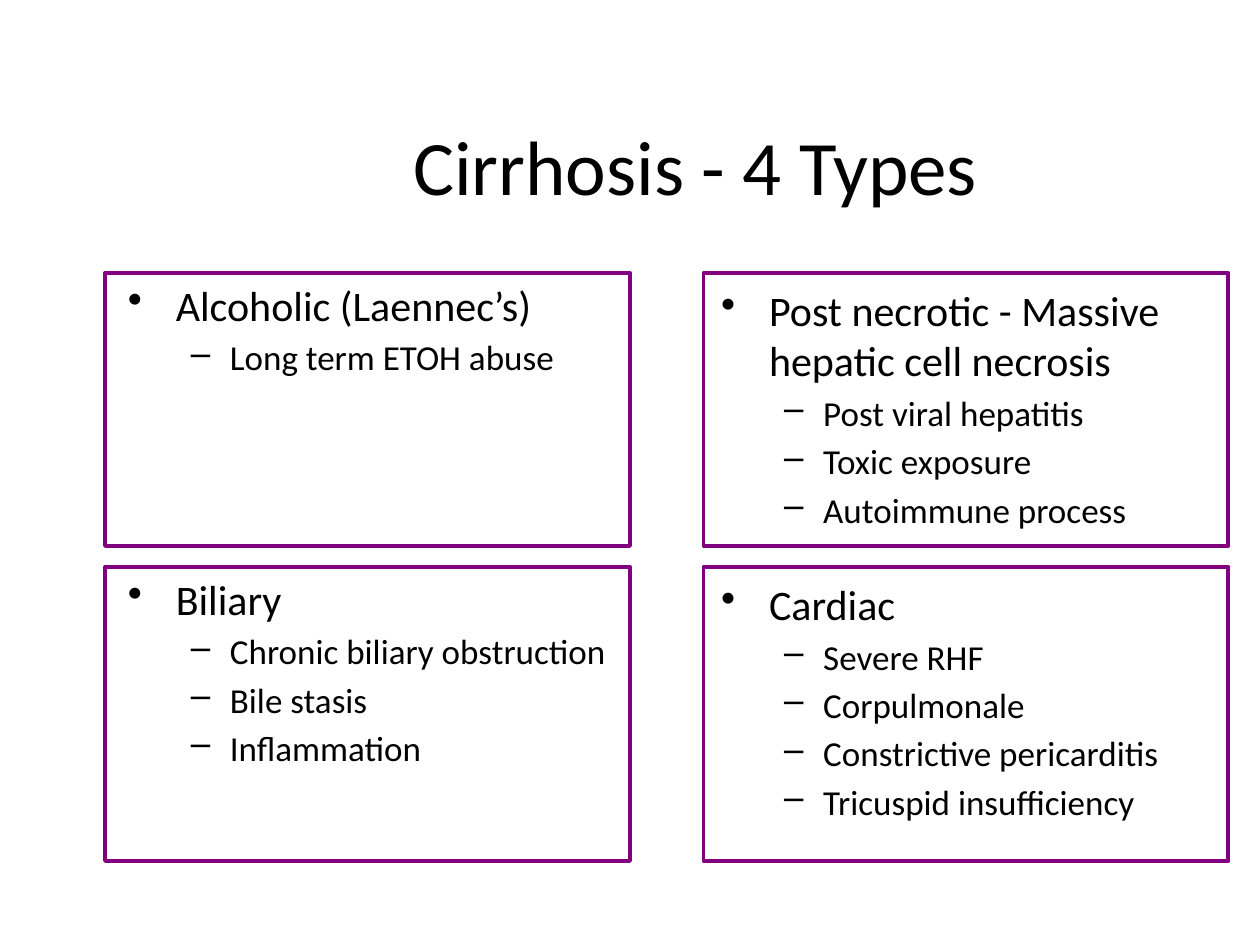
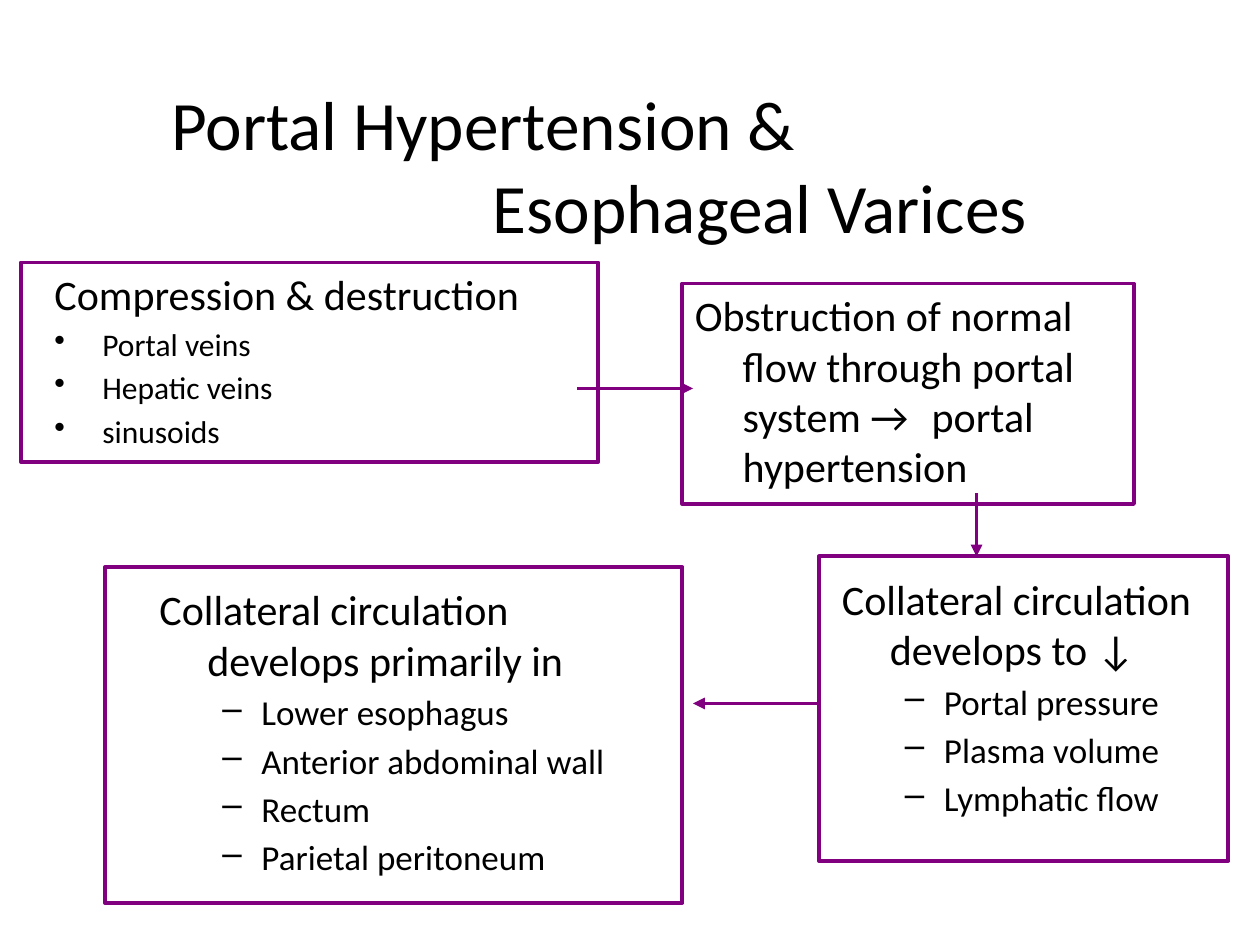
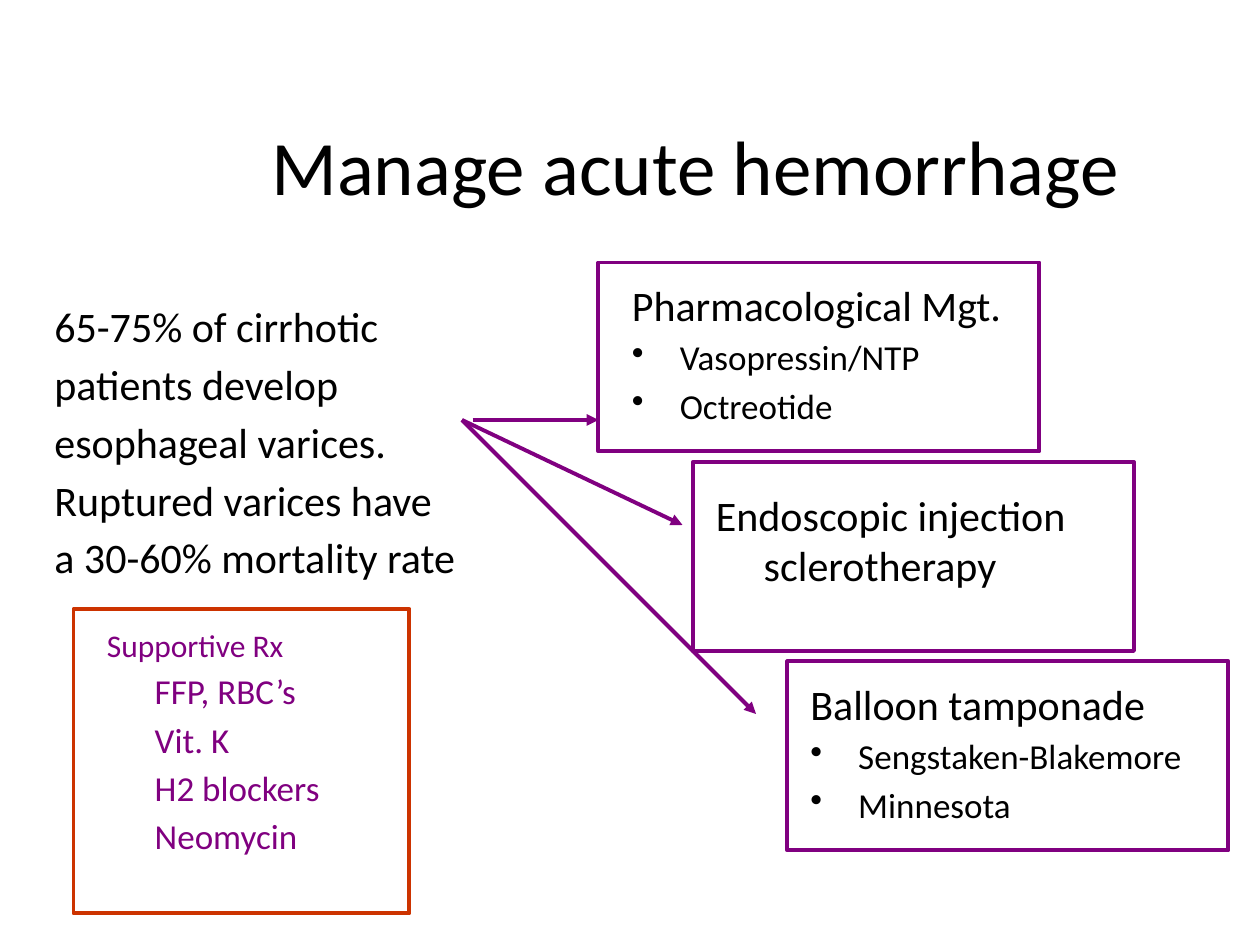
"""Build three slides on cirrhosis, portal hypertension and acute hemorrhage."""
from lxml.etree import SubElement
from pptx import Presentation
from pptx.dml.color import RGBColor
from pptx.enum.shapes import MSO_CONNECTOR, MSO_SHAPE
from pptx.enum.text import MSO_ANCHOR, MSO_AUTO_SIZE, PP_ALIGN
from pptx.oxml.ns import qn
from pptx.util import Inches, Pt

COLORS = {"text": "000000", "accent": "800080", "support": "CC3300"}
FONT = "Calibri"
LINE_WIDTH = Pt(2.25)
CELL = Inches(1) / 12

STYLES = {
    "bullet": (24, 0.38, -0.38, "•"),
    "head": (24, 0.38, -0.38, None),
    "dash": (20, 0.81, -0.31, "–"),
    "dot": (20, 0.38, -0.38, "•"),
    "small dot": (18, 0.38, -0.38, "•"),
    "small head": (18, 0.38, -0.38, None),
    "plain": (20, 0.38, 0, None),
}

types = [
    [("bullet", ["Alcoholic (Laennec’s)"]), ("dash", ["Long term ETOH abuse"])],
    [("bullet", ["Post necrotic - Massive hepatic cell necrosis"]),
     ("dash", ["Post viral hepatitis", "Toxic exposure", "Autoimmune process"])],
    [("bullet", ["Biliary"]),
     ("dash", ["Chronic biliary obstruction", "Bile stasis", "Inflammation"])],
    [("bullet", ["Cardiac"]),
     ("dash", ["Severe RHF", "Corpulmonale", "Constrictive pericarditis",
               "Tricuspid insufficiency"])],
]
type_panels = []
for i, content in enumerate(types):
    row, col = divmod(i, 2)
    left, top = 10 + 57 * col, 26 + 28 * row
    inset = (0.5, 0.5) if col else (1, 0)
    type_panels.append(((left + inset[0], top + inset[1], 50, 26),
                        (left, top, 50, 26 + 2 * row), "text", "accent", content))

hypertension_panels = [
    ((4, 25, 50, 20), (2, 25, 55, 19), "text", "accent",
     [("head", ["Compression & destruction"]),
      ("small dot", ["Portal veins", "Hepatic veins", "sinusoids"])]),
    ((65, 27, 42, 21.5), (65, 27, 43, 21), "text", "accent",
     [("head", ["Obstruction of normal flow through portal system →\tportal hypertension"])]),
    ((14, 55, 50, 31), (10, 54, 55, 32), "text", "accent",
     [("head", ["Collateral circulation develops primarily in"]),
      ("dash", ["Lower esophagus", "Anterior abdominal wall", "Rectum",
                "Parietal peritoneum"])]),
    ((79, 54, 38.5, 26), (78, 53, 39, 29), "text", "accent",
     [("head", ["Collateral circulation develops to ↓"]),
      ("dash", ["Portal pressure", "Plasma volume", "Lymphatic flow"])]),
]

treatments = [
    ((59, 26, 44, 17), [("head", ["Pharmacological Mgt."]),
                        ("dot", ["Vasopressin/NTP", "Octreotide"])]),
    ((67, 46, 41, 12), [("head", ["Endoscopic injection sclerotherapy"])]),
    ((76, 64, 42, 18), [("head", ["Balloon tamponade"]),
                        ("dot", ["Sengstaken-Blakemore", "Minnesota"])]),
]
hemorrhage_panels = [
    ((4, 28, 47, 28), None, "text", None,
     [("head", ["65-75% of cirrhotic", "patients develop", "esophageal varices.",
                "Ruptured varices have", "a 30-60% mortality rate"])]),
    ((9, 59, 29, 27), (7, 58, 32, 29), "accent", "support",
     [("small head", ["Supportive Rx"]),
      ("plain", ["FFP, RBC’s", "Vit. K", "H2 blockers", "Neomycin"])]),
]
for i, (box, content) in enumerate(treatments):
    frame = (57 + 9 * i, 25 + 19 * i, 42, 18)
    hemorrhage_panels.append((box, frame, "text", "accent", content))

slides = [
    ("Cirrhosis - 4 Types", 44, type_panels, []),
    ("Portal Hypertension &\nEsophageal Varices", 39.6, hypertension_panels,
     [(55, 37, 66, 37), (93, 47, 93, 53), (78, 67, 66, 67)]),
    ("Manage acute hemorrhage", 44, hemorrhage_panels,
     [(45, 40, 57, 40), (44, 40, 65, 50), (44, 40, 72, 68)]),
]


def cells(values):
    return [round(v * CELL) for v in values]


def format_paragraph(p, size, color, margin, indent):
    p.font.name = FONT
    p.font.size = Pt(size)
    p.font.color.rgb = RGBColor.from_string(COLORS[color])
    pPr = p._p.get_or_add_pPr()
    pPr.set("marL", str(Inches(margin)))
    pPr.set("indent", str(Inches(indent)))
    return pPr


prs = Presentation()
prs.slide_width, prs.slide_height = Inches(10), Inches(7.5)

for title, title_size, panels, arrows in slides:
    s = prs.slides.add_slide(prs.slide_layouts[5])
    sp = s.shapes.title
    sp.left, sp.top, sp.width, sp.height = [Inches(v) for v in (1.26, 0.68, 8.52, 1.25)]
    tf = sp.text_frame
    tf.text = title
    tf.auto_size = MSO_AUTO_SIZE.NONE
    tf.vertical_anchor = MSO_ANCHOR.MIDDLE
    for i, p in enumerate(tf.paragraphs):
        p.alignment = PP_ALIGN.LEFT if "\n" in title else PP_ALIGN.CENTER
        format_paragraph(p, title_size, "text", 2.55 * i, 0)

    for box, frame, text_color, line_color, content in panels:
        tf = s.shapes.add_textbox(*cells(box)).text_frame
        tf.word_wrap = True
        lines = [(style, text) for style, texts in content for text in texts]
        tf.text = "\n".join(text for style, text in lines)
        for p, (style, text) in zip(tf.paragraphs, lines):
            size, margin, indent, bullet = STYLES[style]
            p.space_before = Pt(0.18 * size)
            pPr = format_paragraph(p, size, text_color, margin, indent)
            if bullet:
                bu = pPr.makeelement(qn("a:buChar"), {"char": bullet})
                pPr.insert_element_before(bu, "a:tabLst", "a:defRPr")
            if "\t" in text:
                tabs = pPr.makeelement(qn("a:tabLst"), {})
                SubElement(tabs, qn("a:tab"), pos=str(Inches(2.1)), algn="l")
                pPr.insert_element_before(tabs, "a:defRPr")
        if frame:
            sp = s.shapes.add_shape(MSO_SHAPE.RECTANGLE, *cells(frame))
            sp.shadow.inherit = False
            sp.fill.background()
            sp.line.color.rgb = RGBColor.from_string(COLORS[line_color])
            sp.line.width = LINE_WIDTH

    for ends in arrows:
        sp = s.shapes.add_connector(MSO_CONNECTOR.STRAIGHT, *cells(ends))
        sp.line.color.rgb = RGBColor.from_string(COLORS["accent"])
        sp.line.width = LINE_WIDTH
        SubElement(sp.line._get_or_add_ln(), qn("a:tailEnd"), type="triangle")
        SubElement(sp._element.spPr, qn("a:effectLst"))

prs.save("out.pptx")
